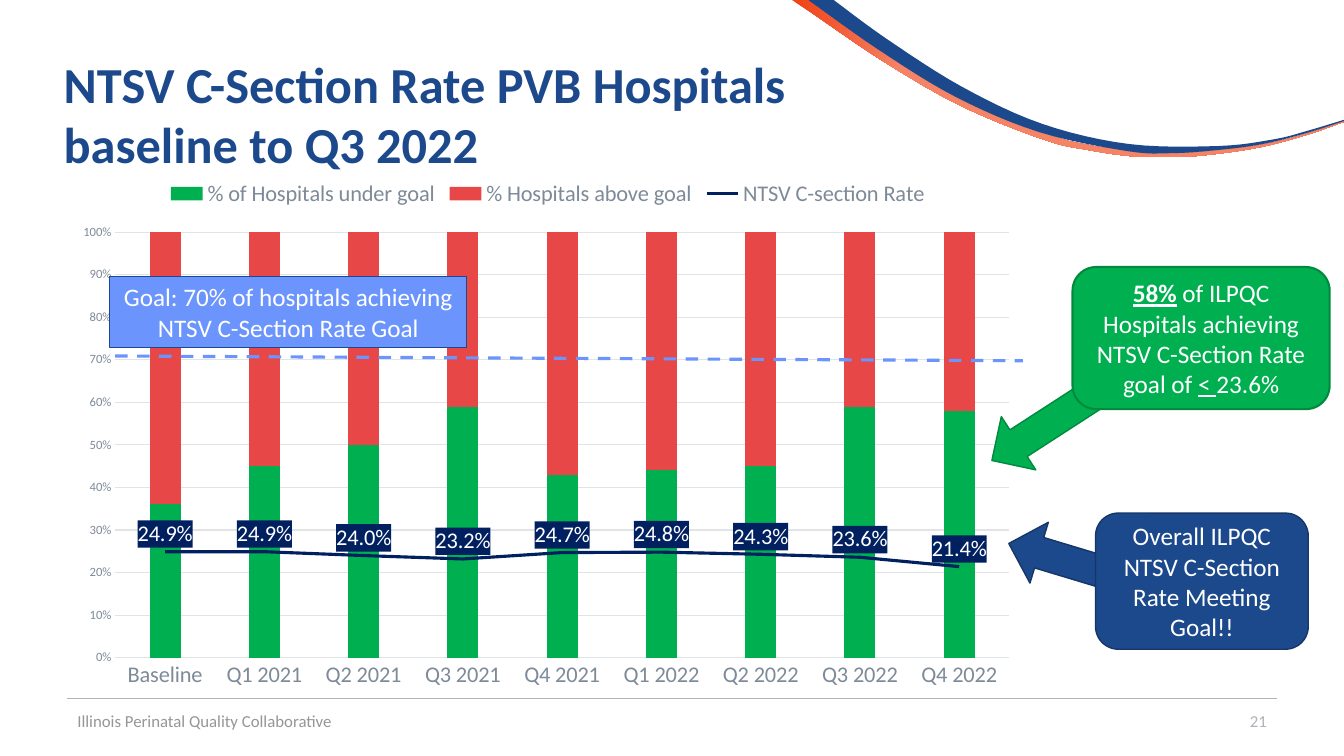
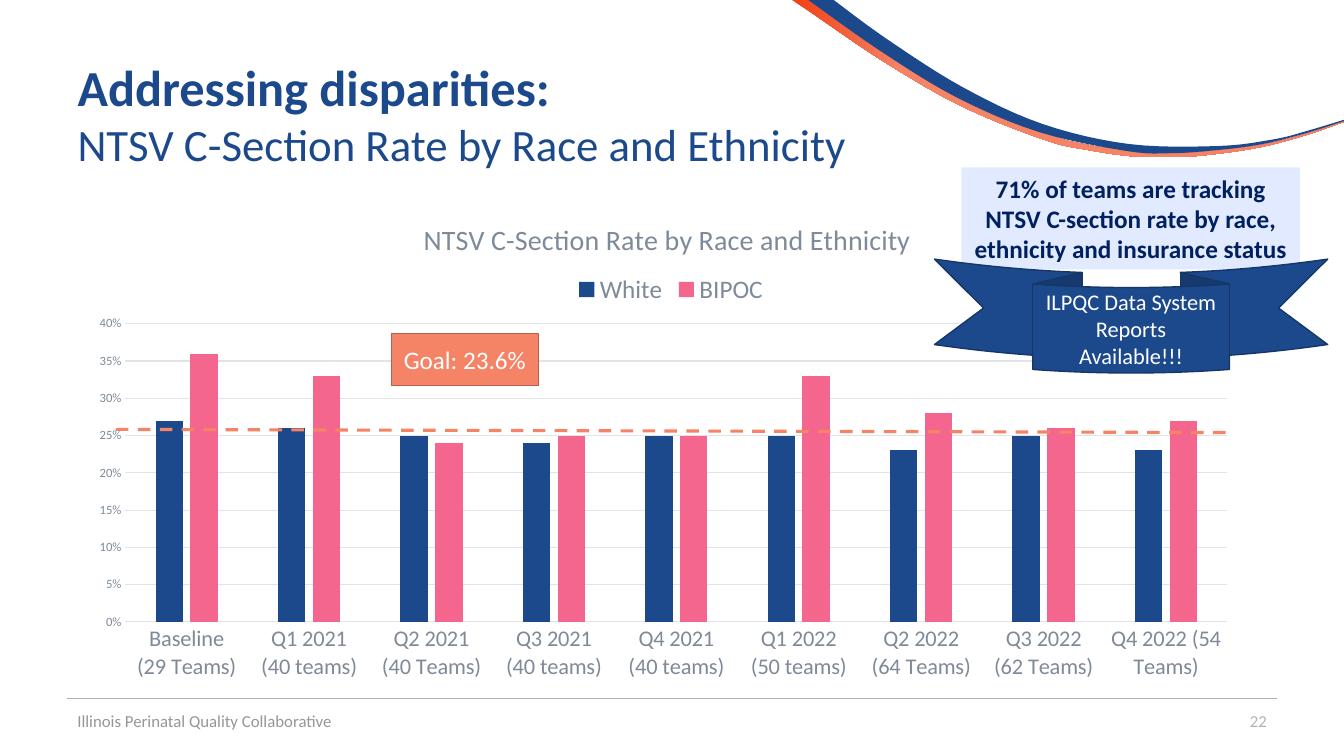
"""Two slides on NTSV C-section rates: hospitals meeting the goal, and rates by race and ethnicity."""
from lxml import etree
from pptx import Presentation
from pptx.chart.data import CategoryChartData
from pptx.dml.color import RGBColor
from pptx.enum.chart import XL_CHART_TYPE, XL_LABEL_POSITION, XL_LEGEND_POSITION, XL_MARKER_STYLE, XL_TICK_MARK
from pptx.enum.dml import MSO_LINE
from pptx.enum.shapes import MSO_CONNECTOR, MSO_SHAPE
from pptx.enum.text import MSO_ANCHOR, MSO_AUTO_SIZE, PP_ALIGN
from pptx.oxml import parse_xml
from pptx.oxml.ns import nsdecls, qn
from pptx.util import Cm, Pt

LEFT, CENTER, RIGHT = PP_ALIGN.LEFT, PP_ALIGN.CENTER, PP_ALIGN.RIGHT
MIDDLE = MSO_ANCHOR.MIDDLE
STACKED, CLUSTERED = XL_CHART_TYPE.COLUMN_STACKED, XL_CHART_TYPE.COLUMN_CLUSTERED
RECT, ROUNDED = MSO_SHAPE.RECTANGLE, MSO_SHAPE.ROUNDED_RECTANGLE
ARROW, RIBBON = MSO_SHAPE.DOWN_ARROW, MSO_SHAPE.CURVED_DOWN_RIBBON
DASH, STRAIGHT = MSO_LINE.DASH, MSO_CONNECTOR.STRAIGHT
ABOVE, TOP = XL_LABEL_POSITION.ABOVE, XL_LEGEND_POSITION.TOP
NO_MARKER, NO_TICK, NO_FIT = XL_MARKER_STYLE.NONE, XL_TICK_MARK.NONE, MSO_AUTO_SIZE.NONE

FONT = "Calibri"
BLUE, DARK_BLUE, NAVY, SKY, PALE = "1C498B", "153667", "002060", "6B95FD", "E1EAFF"
GREEN, DARK_GREEN, RED, PINK = "00B050", "008A3E", "E74747", "F5668F"
FLAME, ORANGE, RUST = "F04115", "F58366", "B5614B"
WHITE, GRID, AXIS, RULE, FOOT, INK = "FFFFFF", "E1E4E7", "7E8A98", "AFB3B9", "949699", "444C55"

FOOTER = "Illinois Perinatal Quality Collaborative"
FIRST_NUMBER = 21

ORANGE_TOP = [(20.45, 0), (22.4, 1.37), (24.33, 2.51), (26.39, 3.38), (27.46, 3.66), (28.58, 3.81),
              (29.67, 3.86), (30.78, 3.78), (31.9, 3.63), (32.99, 3.35), (33.87, 3.05)]
ORANGE_BOTTOM = [(33.87, 3.07), (32.99, 3.38), (31.9, 3.68), (30.81, 3.86), (29.69, 3.96), (28.55, 3.94),
                 (27.43, 3.78), (26.34, 3.53), (24.26, 2.69), (22.3, 1.57), (20.42, 0.3), (19.96, 0)]
BLUE_TOP = [(21.01, 0), (22.33, 0.97), (24.23, 2.18), (26.26, 3.12), (28.45, 3.63), (30.71, 3.68),
            (32.11, 3.51), (32.94, 3.3), (33.87, 3.02)]
BLUE_BOTTOM = [(33.87, 3.05), (32.94, 3.35), (31.83, 3.63), (30.71, 3.78), (29.57, 3.86), (28.42, 3.81),
               (26.19, 3.33), (24.08, 2.44), (22.12, 1.24), (20.37, 0)]

SLIDES = [
    {
        "title": [[("NTSV C-Section Rate PVB Hospitals baseline to Q3 2022", 36, True)]],
        "title_box": (1.35, 1.02, 20.85, 3.68),
        "chart": {
            "type": STACKED, "box": (1.7, 4.24, 24.21, 13.41), "plot": (0.05, 0.12, 0.93, 0.8),
            "max": 1, "step": 0.1, "overlap": 100, "legend_size": 16,
            "cats": ["Baseline", "Q1 2021", "Q2 2021", "Q3 2021", "Q4 2021",
                     "Q1 2022", "Q2 2022", "Q3 2022", "Q4 2022"],
            "bars": [
                ("% of Hospitals under goal", GREEN, [0.36, 0.45, 0.5, 0.59, 0.43, 0.44, 0.45, 0.59, 0.58]),
                ("% Hospitals above goal", RED, [0.64, 0.55, 0.5, 0.41, 0.57, 0.56, 0.55, 0.41, 0.42]),
            ],
            "line": ("NTSV C-section Rate", NAVY,
                     [0.249, 0.249, 0.24, 0.232, 0.247, 0.248, 0.243, 0.236, 0.214]),
        },
        "goal_line": ((2.9, 8.97), (25.78, 9.09), SKY),
        "shapes": [
            (ARROW, (25.88, 8.51, 1.6, 4.01), 57.1, GREEN, DARK_GREEN, 1, []),
            (ROUNDED, (27.03, 6.73, 6.48, 3.58), 0, GREEN, DARK_GREEN, 1.5,
             [("58%", 18, True, WHITE, True),
              (" of ILPQC Hospitals achieving NTSV C-Section Rate goal of ", 18, False, WHITE),
              ("< ", 18, False, WHITE, True), ("23.6%", 18, False, WHITE)]),
            (ARROW, (26.54, 12.27, 1.6, 4.01), 106.8, BLUE, DARK_BLUE, 1, []),
            (ROUNDED, (27.61, 12.93, 5.36, 3.43), 0, BLUE, DARK_BLUE, 1,
             [("Overall ILPQC NTSV C-Section Rate Meeting Goal!!", 18, False, WHITE)]),
            (RECT, (2.77, 6.96, 8.99, 1.8), 0, SKY, BLUE, 0.75,
             [("Goal: 70% of hospitals achieving NTSV C-Section Rate Goal", 18, False, WHITE)]),
        ],
    },
    {
        "title": [[("Addressing disparities:", 36, True)],
                  [("NTSV C-Section Rate by Race and Ethnicity", 32, False)]],
        "title_box": (1.7, 1.02, 30.48, 3.68),
        "chart": {
            "type": CLUSTERED, "box": (1.98, 4.78, 29.54, 12.52), "plot": (0.04, 0.27, 0.94, 0.6),
            "title": "NTSV C-Section Rate by Race and Ethnicity", "title_at": (0.29, 0.05),
            "legend_at": (0.42, 0.16),
            "max": 0.4, "step": 0.05, "overlap": -27, "legend_size": 18,
            "cats": ["Baseline\n(29 Teams)", "Q1 2021\n(40 teams)", "Q2 2021\n(40 Teams)",
                     "Q3 2021\n(40 teams)", "Q4 2021\n(40 teams)", "Q1 2022\n(50 teams)",
                     "Q2 2022\n(64 Teams)", "Q3 2022\n(62 Teams)", "Q4 2022 (54 Teams)"],
            "bars": [
                ("White", BLUE, [0.27, 0.26, 0.25, 0.24, 0.25, 0.25, 0.23, 0.25, 0.23]),
                ("BIPOC", PINK, [0.36, 0.33, 0.24, 0.25, 0.25, 0.33, 0.28, 0.26, 0.27]),
            ],
        },
        "goal_line": ((2.92, 10.82), (30.94, 10.9), ORANGE),
        "shapes": [
            (RECT, (9.86, 8.41, 3.71, 1.3), 0, ORANGE, RUST, 1, [("Goal: 23.6%", 18, False, WHITE)]),
            (RECT, (24.23, 4.22, 8.53, 2.57), 0, PALE, None, 0,
             [("71% of teams are tracking NTSV C-section rate by race, ethnicity and insurance status",
               18, True, NAVY)]),
            (RIBBON, (23.55, 6.53, 9.91, 2.87), 0, BLUE, DARK_BLUE, 1,
             [("ILPQC Data System Reports Available!!!", 16, False, WHITE)]),
        ],
    },
]


def rgb(color):
    return RGBColor.from_string(color)


def cm(values):
    return [Cm(v) for v in values]


def style(font, size, color, bold=False, underline=False):
    font.name, font.size, font.bold, font.underline = FONT, Pt(size), bold, underline
    font.color.rgb = rgb(color)


def write(p, runs, align):
    p.alignment = align
    for text, size, bold, color, *underline in runs:
        r = p.add_run()
        r.text = text
        style(r.font, size, color, bold, bool(underline))


def add_text(s, box, text, color, align):
    tf = s.shapes.add_textbox(*cm(box)).text_frame
    tf.word_wrap, tf.vertical_anchor = True, MIDDLE
    write(tf.paragraphs[0], [(text, 12, False, color)], align)


def add_line(s, start, end, color, width, dash=None):
    line = s.shapes.add_connector(STRAIGHT, *cm(start + end))
    line.line.color.rgb = rgb(color)
    line.line.width = Pt(width)
    if dash:
        line.line.dash_style = dash
    etree.SubElement(line._element.spPr, qn("a:effectLst"))
    return line


def add_shape(s, kind, box, angle, fill, outline, width, runs):
    sp = s.shapes.add_shape(kind, *cm(box))
    sp.shadow.inherit = False
    sp.rotation = angle
    sp.fill.solid()
    sp.fill.fore_color.rgb = rgb(fill)
    if outline:
        sp.line.color.rgb = rgb(outline)
        sp.line.width = Pt(width)
    else:
        sp.line.fill.background()
    tf = sp.text_frame
    tf.word_wrap, tf.vertical_anchor = True, MIDDLE
    write(tf.paragraphs[0], runs, CENTER)


def smooth(points, steps=6):
    """Return points on a Catmull-Rom curve through the given points."""
    padded = [points[0], *points, points[-1]]
    curve = []
    for a, b, c, d in zip(padded, padded[1:], padded[2:], padded[3:]):
        for t in (i / steps for i in range(steps)):
            curve.append(tuple(
                (2 * q + (r - p) * t + (2 * p - 5 * q + 4 * r - u) * t ** 2
                 + (3 * q - p - 3 * r + u) * t ** 3) / 2
                for p, q, r, u in zip(a, b, c, d)))
    return curve + [points[-1]]


def add_swoosh(s, top, bottom):
    points = [tuple(cm(point)) for point in smooth(top) + smooth(bottom)]
    builder = s.shapes.build_freeform(*points[0])
    builder.add_line_segments(points[1:], close=True)
    sp = builder.convert_to_shape()
    sp.shadow.inherit = False
    sp.line.fill.background()
    return sp


def decorate(layout, s):
    """Draw the swoosh and footer rule and hand them to the layout all slides share."""
    for ph in list(layout.placeholders)[1:]:
        ph.element.getparent().remove(ph.element)
    lower = add_swoosh(s, ORANGE_TOP, ORANGE_BOTTOM)
    lower.fill.gradient()
    lower.fill.gradient_angle = 0
    for stop, position, color in zip(lower.fill.gradient_stops, (0, 0.2), (FLAME, ORANGE)):
        stop.position = position
        stop.color.rgb = rgb(color)
    upper = add_swoosh(s, BLUE_TOP, BLUE_BOTTOM)
    upper.fill.solid()
    upper.fill.fore_color.rgb = rgb(BLUE)
    rule = add_line(s, (1.7, 17.6), (32.18, 17.6), RULE, 0.5)
    for part in (lower, upper, rule):
        layout.shapes.element.append(part.element)


def pin(element, index, values):
    """Give a chart part a fixed place, as fractions of the chart."""
    for old in element.findall(qn("c:layout")):
        element.remove(old)
    layout = etree.Element(qn("c:layout"))
    manual = etree.SubElement(layout, qn("c:manualLayout"))
    settings = [("xMode", "edge"), ("yMode", "edge"), *zip("xywh", values)]
    if index == 0:
        settings.insert(0, ("layoutTarget", "inner"))
    for tag, value in settings:
        etree.SubElement(manual, qn("c:" + tag)).set("val", str(value))
    element.insert(index, layout)


def line_from_last_series(chart, color):
    """Turn the last bar series into a labelled line on the same axes."""
    bars = chart.element.find(".//" + qn("c:barChart"))
    ser = bars.findall(qn("c:ser"))[-1]
    for flag in ser.findall(qn("c:invertIfNegative")):
        ser.remove(flag)
    plot = parse_xml(f'<c:lineChart {nsdecls("c")}><c:grouping val="standard"/>'
                     '<c:varyColors val="0"/><c:marker val="1"/></c:lineChart>')
    plot.insert(2, ser)
    for axis in bars.findall(qn("c:axId")):
        etree.SubElement(plot, qn("c:axId")).set("val", axis.get("val"))
    bars.addnext(plot)
    series = chart.plots[1].series[0]
    series.smooth = False
    series.marker.style = NO_MARKER
    series.format.line.color.rgb = rgb(color)
    series.format.line.width = Pt(2.25)
    labels = series.data_labels
    labels.show_value, labels.position = True, ABOVE
    labels.number_format, labels.number_format_is_linked = "0.0%", False
    style(labels.font, 16, WHITE)
    ser.find(qn("c:dLbls")).find(qn("c:numFmt")).addnext(parse_xml(
        f'<c:spPr {nsdecls("c", "a")}><a:solidFill><a:srgbClr val="{color}"/></a:solidFill></c:spPr>'))


def add_chart(s, content):
    line = content.get("line")
    data = CategoryChartData(number_format="0%")
    data.categories = content["cats"]
    for name, _, values in content["bars"] + ([line] if line else []):
        data.add_series(name, values)
    chart = s.shapes.add_chart(content["type"], *cm(content["box"]), data).chart
    style(chart.font, 10, INK)
    bars = chart.plots[0]
    bars.gap_width, bars.overlap, bars.vary_by_categories = 219, content["overlap"], False
    for series, (_, color, _) in zip(bars.series, content["bars"]):
        series.format.fill.solid()
        series.format.fill.fore_color.rgb = rgb(color)
    if line:
        line_from_last_series(chart, line[1])

    cat, val = chart.category_axis, chart.value_axis
    for axis, size in ((cat, 16), (val, 9)):
        axis.major_tick_mark = axis.minor_tick_mark = NO_TICK
        style(axis.tick_labels.font, size, AXIS)
    val.minimum_scale, val.maximum_scale, val.major_unit = 0, content["max"], content["step"]
    val.tick_labels.number_format, val.tick_labels.number_format_is_linked = "0%", False
    val.format.line.fill.background()
    for edge in (cat.format.line, val.major_gridlines.format.line):
        edge.color.rgb = rgb(GRID)
        edge.width = Pt(0.75)

    chart.has_legend = True
    chart.legend.position, chart.legend.include_in_layout = TOP, False
    style(chart.legend.font, content["legend_size"], AXIS)
    plot_area = chart.element.find(".//" + qn("c:plotArea"))
    pin(plot_area, 0, content["plot"])
    chart.has_title = "title" in content
    if chart.has_title:
        write(chart.chart_title.text_frame.paragraphs[0], [(content["title"], 20, False, AXIS)], CENTER)
        pin(plot_area.getparent().find(qn("c:title")), 1, content["title_at"])
        legend = plot_area.getparent().find(qn("c:legend"))
        pin(legend, 1 if legend.find(qn("c:legendPos")) is not None else 0, content["legend_at"])


def add_title(s, box, lines):
    title = s.shapes.title
    title.left, title.top, title.width, title.height = cm(box)
    tf = title.text_frame
    tf.word_wrap, tf.vertical_anchor, tf.auto_size = True, MIDDLE, NO_FIT
    for i, runs in enumerate(lines):
        p = tf.add_paragraph() if i else tf.paragraphs[0]
        write(p, [(*run, BLUE) for run in runs], LEFT)


def main():
    prs = Presentation()
    prs.slide_width, prs.slide_height = Cm(33.87), Cm(19.05)
    layout = prs.slide_layouts[5]
    for i, content in enumerate(SLIDES):
        s = prs.slides.add_slide(layout)
        if i == 0:
            decorate(layout, s)
        add_title(s, content["title_box"], content["title"])
        add_chart(s, content["chart"])
        add_text(s, (24.56, 17.65, 7.62, 1.02), str(FIRST_NUMBER + i), RULE, RIGHT)
        add_text(s, (1.7, 17.65, 11.43, 1.02), FOOTER, FOOT, LEFT)
        add_line(s, *content["goal_line"], 2.25, DASH)
        for shape in content["shapes"]:
            add_shape(s, *shape)
    prs.save("out.pptx")


if __name__ == "__main__":
    main()
